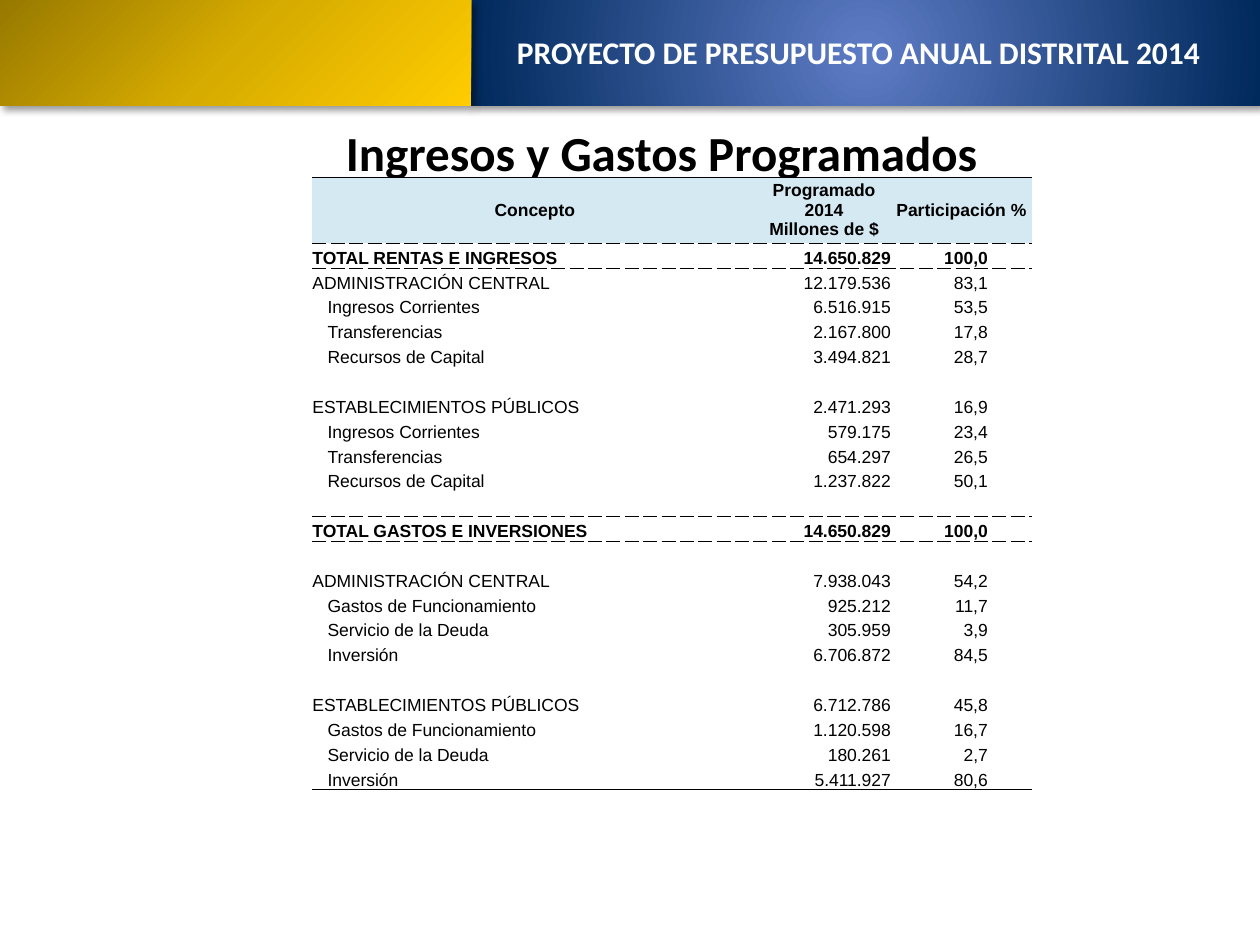
from dataclasses import dataclass
from typing import Optional

from lxml import etree
from pptx import Presentation
from pptx.dml.color import RGBColor
from pptx.enum.shapes import MSO_SHAPE
from pptx.enum.text import MSO_ANCHOR, PP_ALIGN
from pptx.oxml import parse_xml
from pptx.oxml.ns import nsdecls, qn
from pptx.util import Inches, Pt

RECT = MSO_SHAPE.RECTANGLE
TOP, MIDDLE, BOTTOM = MSO_ANCHOR.TOP, MSO_ANCHOR.MIDDLE, MSO_ANCHOR.BOTTOM
LEFT, CENTER, RIGHT = PP_ALIGN.LEFT, PP_ALIGN.CENTER, PP_ALIGN.RIGHT


@dataclass(frozen=True)
class Theme:
    """Colours, fonts and type sizes of the slide."""
    black: str = "000000"
    white: str = "FFFFFF"
    header: str = "D5E9F3"
    blues: tuple = ("5E7CC5", "00295C")
    golds: tuple = ("977900", "D7AC00", "FFCC00")
    heading_font: str = "Calibri"
    table_font: str = "Arial"
    title_size: int = 28
    banner_size: int = 18
    table_size: int = 10
    rule_width: float = 0.5


@dataclass(frozen=True)
class Panel:
    """A banner panel with a radial gradient around a focus given in percent."""
    left: float
    width: float
    colors: tuple
    focus: int


@dataclass(frozen=True)
class Row:
    """A budget line; the level is 0 for totals, 1 for groups and 2 for items."""
    concept: str = ""
    amount: str = ""
    share: str = ""
    level: int = 1


THEME = Theme()
BANNER_HEIGHT = 0.84
PANELS = (Panel(3.74, 6.26, THEME.blues, 50), Panel(0, 3.74, THEME.golds, 0))
TABLE_LEFT, TABLE_TOP, TABLE_HEIGHT = 2.48, 1.41, 4.86
COLUMN_WIDTHS = (3.53, 1.06, 1.12)
HEADER_HEIGHT = 0.52
ITEM_INDENT, SHARE_MARGIN = 0.12, 0.35
HEADERS = ("Concepto", "Programado 2014\nMillones de $", "Participación %")
ROWS = (
    Row("TOTAL RENTAS E INGRESOS", "14.650.829", "100,0", 0),
    Row("ADMINISTRACIÓN CENTRAL", "12.179.536", "83,1"),
    Row("Ingresos Corrientes", "6.516.915", "53,5", 2),
    Row("Transferencias", "2.167.800", "17,8", 2),
    Row("Recursos de Capital", "3.494.821", "28,7", 2),
    Row(),
    Row("ESTABLECIMIENTOS PÚBLICOS", "2.471.293", "16,9"),
    Row("Ingresos Corrientes", "579.175", "23,4", 2),
    Row("Transferencias", "654.297", "26,5", 2),
    Row("Recursos de Capital", "1.237.822", "50,1", 2),
    Row(),
    Row("TOTAL GASTOS E INVERSIONES", "14.650.829", "100,0", 0),
    Row(),
    Row("ADMINISTRACIÓN CENTRAL", "7.938.043", "54,2"),
    Row("Gastos de Funcionamiento", "925.212", "11,7", 2),
    Row("Servicio de la Deuda", "305.959", "3,9", 2),
    Row("Inversión", "6.706.872", "84,5", 2),
    Row(),
    Row("ESTABLECIMIENTOS PÚBLICOS", "6.712.786", "45,8"),
    Row("Gastos de Funcionamiento", "1.120.598", "16,7", 2),
    Row("Servicio de la Deuda", "180.261", "2,7", 2),
    Row("Inversión", "5.411.927", "80,6", 2),
)


def format_paragraph(p, font: str, size: int, color: str, bold: bool, align) -> None:
    """Set the alignment and font of a paragraph."""
    p.alignment = align
    p.font.name, p.font.size, p.font.bold = font, Pt(size), bold
    p.font.color.rgb = RGBColor.from_string(color)


def add_panel(slide, panel: Panel) -> None:
    """Draw a banner panel with its gradient and shadow."""
    sp = slide.shapes.add_shape(RECT, Inches(panel.left), 0, Inches(panel.width), Inches(BANNER_HEIGHT))
    last = len(panel.colors) - 1
    stops = "".join(f'<a:gs pos="{i * 100000 // last}"><a:srgbClr val="{color}"/></a:gs>'
                    for i, color in enumerate(panel.colors))
    near, far = panel.focus * 1000, (100 - panel.focus) * 1000
    sp.fill.background()
    sp.line.fill.background()
    props = sp.element.spPr
    props.replace(props.find(qn("a:noFill")), parse_xml(
        f'<a:gradFill {nsdecls("a")} rotWithShape="1"><a:gsLst>{stops}</a:gsLst><a:path path="circle">'
        f'<a:fillToRect l="{near}" t="{near}" r="{far}" b="{far}"/></a:path></a:gradFill>'))
    props.append(parse_xml(
        f'<a:effectLst {nsdecls("a")}><a:outerShdw blurRad="{Pt(4)}" dist="{Pt(3)}" dir="2700000" '
        f'algn="tl" rotWithShape="0"><a:srgbClr val="{THEME.black}"><a:alpha val="40000"/></a:srgbClr>'
        '</a:outerShdw></a:effectLst>'))


def set_heading(sp, text: str, size: int, color: str) -> None:
    """Write a centred bold heading into a shape."""
    tf = sp.text_frame
    tf.word_wrap, tf.vertical_anchor = True, TOP
    tf.text = text
    format_paragraph(tf.paragraphs[0], THEME.heading_font, size, color, True, CENTER)


def set_borders(cell, top: Optional[str], bottom: Optional[str]) -> None:
    """Rule the top and bottom of a cell and clear its sides."""
    props = cell._tc.get_or_add_tcPr()
    for tag, dash in (("lnL", None), ("lnR", None), ("lnT", top), ("lnB", bottom)):
        ln = etree.SubElement(props, qn(f"a:{tag}"), w=str(Pt(THEME.rule_width)))
        if dash is None:
            etree.SubElement(ln, qn("a:noFill"))
            continue
        fill = etree.SubElement(ln, qn("a:solidFill"))
        etree.SubElement(fill, qn("a:srgbClr"), val=THEME.black)
        etree.SubElement(ln, qn("a:prstDash"), val=dash)


def set_cell(cell, text: str, bold: bool, align, anchor, left: float = 0, right: float = 0) -> None:
    """Write and format the text of a cell."""
    cell.margin_top = cell.margin_bottom = 0
    cell.margin_left, cell.margin_right = Inches(left), Inches(right)
    cell.vertical_anchor = anchor
    cell.text = text
    for p in cell.text_frame.paragraphs:
        format_paragraph(p, THEME.table_font, THEME.table_size, THEME.black, bold, align)
        if not text:
            etree.SubElement(p._p, qn("a:endParaRPr"), sz=str(THEME.table_size * 100))


def add_budget_table(slide) -> None:
    """Draw the table of income and expenses."""
    table = slide.shapes.add_table(
        len(ROWS) + 1, len(HEADERS), Inches(TABLE_LEFT), Inches(TABLE_TOP),
        Inches(sum(COLUMN_WIDTHS)), Inches(TABLE_HEIGHT)).table
    table.first_row = table.horz_banding = False
    for column, width in zip(table.columns, COLUMN_WIDTHS):
        column.width = Inches(width)
    rules = ["solid"] + [None] * len(ROWS) + ["solid"]
    for i, row in enumerate(ROWS, 1):
        table.rows[i].height = Inches((TABLE_HEIGHT - HEADER_HEIGHT) / len(ROWS))
        if row.level == 0:
            rules[i] = rules[i + 1] = "dash"
        bold, indent = row.level == 0, ITEM_INDENT if row.level == 2 else 0
        set_cell(table.cell(i, 0), row.concept, bold, LEFT, BOTTOM, left=indent)
        set_cell(table.cell(i, 1), row.amount, bold, RIGHT, BOTTOM)
        set_cell(table.cell(i, 2), row.share, bold, RIGHT, BOTTOM, right=SHARE_MARGIN)
    table.rows[0].height = Inches(HEADER_HEIGHT)
    for j, text in enumerate(HEADERS):
        set_cell(table.cell(0, j), text, True, CENTER, MIDDLE)
        for i in range(len(ROWS) + 1):
            cell = table.cell(i, j)
            set_borders(cell, rules[i], rules[i + 1])
            if i:
                cell.fill.background()
            else:
                cell.fill.solid()
                cell.fill.fore_color.rgb = RGBColor.from_string(THEME.header)


def main() -> None:
    """Build the budget slide and save it."""
    prs = Presentation()
    prs.slide_width, prs.slide_height = Inches(10), Inches(7.5)
    slide = prs.slides.add_slide(prs.slide_layouts[5])
    for panel in PANELS:
        add_panel(slide, panel)
    title = slide.shapes.title
    title.left, title.top, title.width, title.height = map(Inches, (0.78, 0.92, 8.94, 0.63))
    set_heading(title, "Ingresos y Gastos Programados", THEME.title_size, THEME.black)
    banner = slide.shapes.add_textbox(*map(Inches, (3.9, 0.21, 5.83, 0.46)))
    set_heading(banner, "PROYECTO DE PRESUPUESTO ANUAL DISTRITAL 2014", THEME.banner_size, THEME.white)
    add_budget_table(slide)
    prs.save("out.pptx")


if __name__ == "__main__":
    main()
